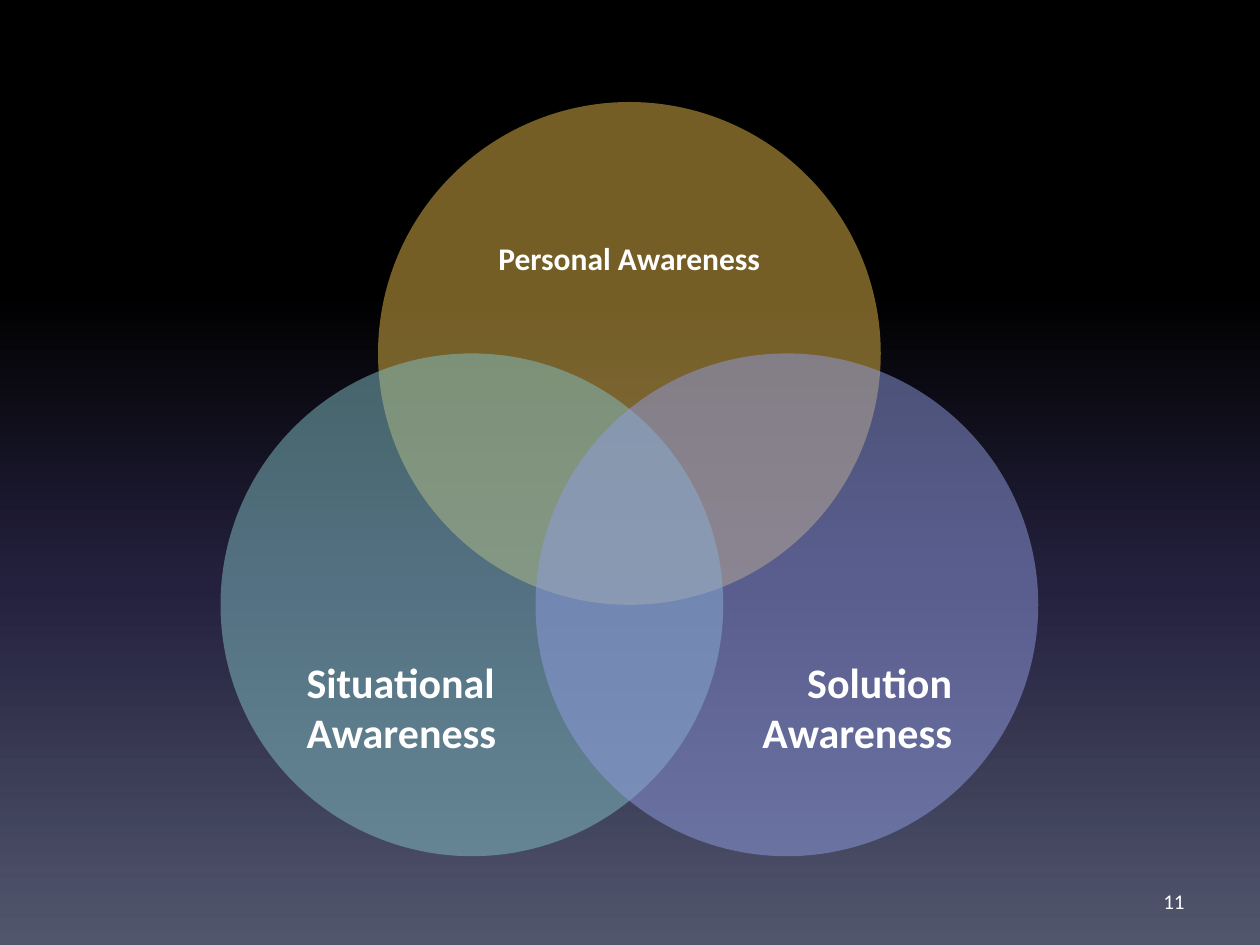
"""Build a slide with a three-circle Venn diagram of awareness types."""
from lxml.etree import SubElement
from pptx import Presentation
from pptx.dml.color import RGBColor
from pptx.enum.shapes import MSO_SHAPE
from pptx.enum.text import MSO_ANCHOR, PP_ALIGN
from pptx.oxml.ns import qn
from pptx.util import Inches, Pt

COLORS = {
    "personal": "E8BC4A",
    "situational": "83C1C6",
    "solution": "909CE1",
    "text": "FFFFFF",
}
BACKGROUND = [(0, "000000"), (31, "000000"), (62, "24213E"), (100, "51566D")]
FONT = "Calibri"
DIAMETER = 3.99
LEFT, TOP = 1.75, 0.81
COL, ROW = 1.25, DIAMETER / 2


def paint_background(s):
    """Fill the slide background with a vertical gradient."""
    fill = s.background.fill
    fill.gradient()
    fill.gradient_angle = 270
    stops = s.background._cSld.find(".//" + qn("a:gsLst"))
    for stop in list(stops):
        stops.remove(stop)
    for pos, color in BACKGROUND:
        stop = SubElement(stops, qn("a:gs"), pos=str(pos * 1000))
        SubElement(stop, qn("a:srgbClr"), val=color)


def write_lines(tf, lines, size, align, bold=False):
    """Write one paragraph per line in the slide's text style."""
    for i, line in enumerate(lines):
        p = tf.add_paragraph() if i else tf.paragraphs[0]
        p.alignment = align
        r = p.add_run()
        r.text = line
        r.font.name = FONT
        r.font.size = Pt(size)
        r.font.bold = bold
        r.font.color.rgb = RGBColor.from_string(COLORS["text"])


def add_circle(s, col, row, color, lines, size, align, inset):
    """Add a half-transparent circle with its label below the given inset."""
    sp = s.shapes.add_shape(
        MSO_SHAPE.OVAL, Inches(LEFT + col * COL), Inches(TOP + row * ROW),
        Inches(DIAMETER), Inches(DIAMETER))
    sp.shadow.inherit = False
    sp.line.fill.background()
    sp.fill.solid()
    sp.fill.fore_color.rgb = RGBColor.from_string(COLORS[color])
    rgb = sp._element.spPr.find(qn("a:solidFill")).find(qn("a:srgbClr"))
    SubElement(rgb, qn("a:alpha"), val="50000")
    tf = sp.text_frame
    tf.word_wrap = True
    tf.vertical_anchor = MSO_ANCHOR.TOP
    tf.margin_top = Inches(inset)
    write_lines(tf, lines, size, align, bold=True)


def add_page_number(s, number):
    """Add the page number at the lower right."""
    sp = s.shapes.add_textbox(Inches(7.17), Inches(6.95), Inches(2.33), Inches(0.4))
    tf = sp.text_frame
    tf.word_wrap = True
    tf.vertical_anchor = MSO_ANCHOR.MIDDLE
    write_lines(tf, [number], 12, PP_ALIGN.RIGHT)


def main():
    """Build and save the slide."""
    prs = Presentation()
    prs.slide_width, prs.slide_height = Inches(10), Inches(7.5)
    s = prs.slides.add_slide(prs.slide_layouts[6])
    paint_background(s)
    add_circle(s, 1, 0, "personal", ["Personal Awareness"], 18, PP_ALIGN.CENTER, 0.5)
    add_circle(s, 0, 1, "situational", ["Situational", "Awareness"], 24, PP_ALIGN.LEFT, 1.82)
    add_circle(s, 2, 1, "solution", ["Solution", "Awareness"], 24, PP_ALIGN.RIGHT, 1.82)
    add_page_number(s, "11")
    prs.save("out.pptx")


if __name__ == "__main__":
    main()
